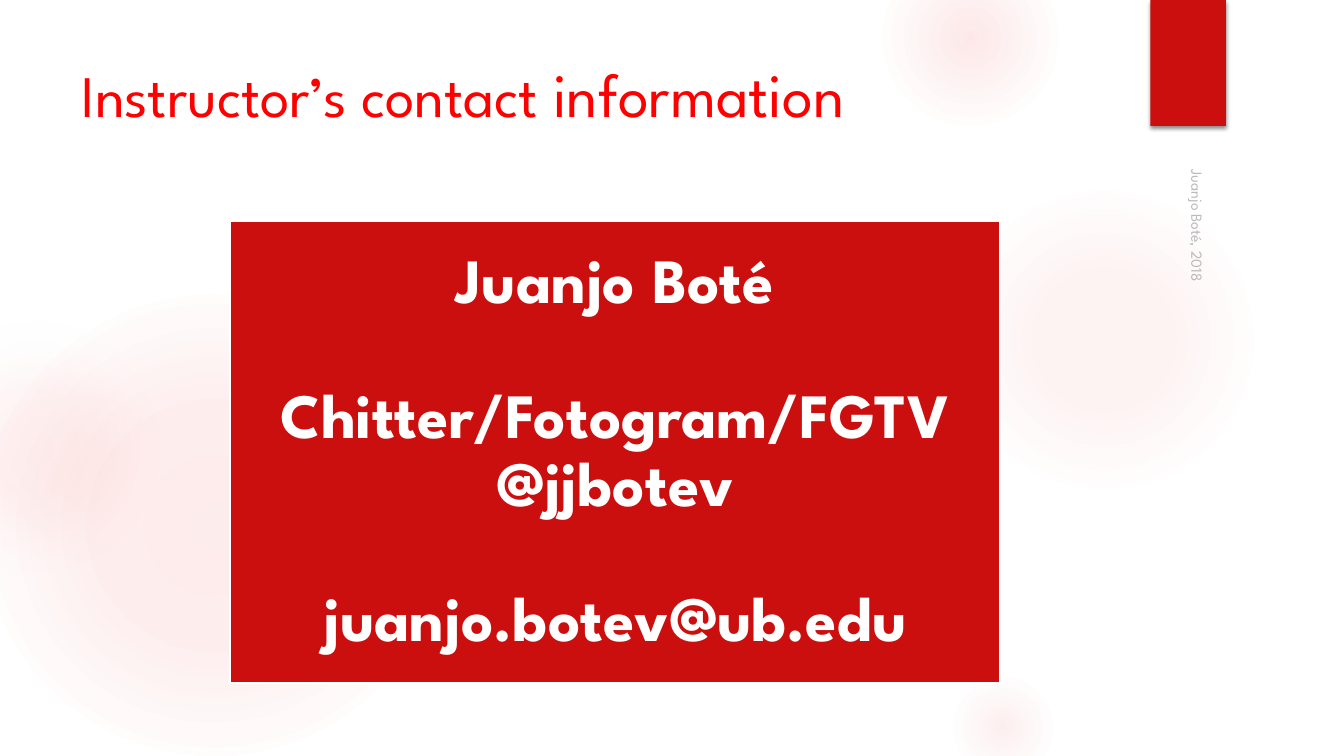
from lxml import etree
from pptx import Presentation
from pptx.dml.color import RGBColor
from pptx.enum.shapes import MSO_SHAPE
from pptx.enum.text import MSO_ANCHOR, MSO_AUTO_SIZE, PP_ALIGN
from pptx.oxml import parse_xml
from pptx.oxml.ns import qn
from pptx.util import Inches, Pt

OVAL, RECT = MSO_SHAPE.OVAL, MSO_SHAPE.RECTANGLE
TOP, MID, BASE = MSO_ANCHOR.TOP, MSO_ANCHOR.MIDDLE, MSO_ANCHOR.BOTTOM
LEFT, MIDDLE = PP_ALIGN.LEFT, PP_ALIGN.CENTER
FIXED = MSO_AUTO_SIZE.NONE
FONT = "League Spartan"
NS = "http://schemas.openxmlformats.org/drawingml/2006/main"
COLORS = {"red": "CB0F0F", "title": "FF0000", "glow": "F35C5C",
          "pale": "F3F3F3", "white": "FFFFFF", "gray": "8C8C8C",
          "black": "000000"}

# Left, top, diameter, then (position, opacity, colour) of each stop
GLOWS = [
    (-0.17, 2.92, 4.58, [(0, 11, "glow"), (36, 10, "glow"), (75, 0, "glow")]),
    (-0.92, 3.17, 2.58, [(0, 8, "glow"), (36, 5, "glow"), (71, 0, "pale")]),
    (9.41, 1.83, 3.08, [(0, 7, "glow"), (36, 6, "glow"), (69, 0, "glow")]),
    (8.75, -0.5, 1.75, [(0, 14, "glow"), (36, 7, "glow"), (73, 0, "glow")]),
    (9.41, 6.67, 1.08, [(0, 10, "glow"), (31, 5, "glow"), (66, 0, "glow")]),
]


def color(name):
    return RGBColor.from_string(COLORS[name])


def add_form(slide, kind, box, fill):
    form = slide.shapes.add_shape(kind, *map(Inches, box))
    form.shadow.inherit = False
    form.fill.solid()
    form.fill.fore_color.rgb = color(fill)
    form.line.fill.background()
    return form


def set_frame(frame, anchor):
    frame.word_wrap = True
    frame.auto_size = FIXED
    frame.vertical_anchor = anchor


def add_run(para, text, size, tint, bold=False):
    run = para.add_run()
    run.text = text
    font = run.font
    font.name, font.size, font.bold = FONT, Pt(size), bold
    font.color.rgb = color(tint)
    return run


def add_glow(slide, box, stops):
    """Soft round spot that fades out from its centre."""
    spot = add_form(slide, OVAL, box, "glow")
    marks = "".join(
        f'<a:gs pos="{pos * 1000}"><a:srgbClr val="{COLORS[tint]}">'
        f'<a:alpha val="{alpha * 1000}"/></a:srgbClr></a:gs>'
        for pos, alpha, tint in stops)
    grad = parse_xml(
        f'<a:gradFill xmlns:a="{NS}" rotWithShape="1"><a:gsLst>{marks}</a:gsLst>'
        '<a:path path="circle"><a:fillToRect l="50000" t="50000" r="50000" '
        'b="50000"/></a:path></a:gradFill>')
    props = spot._element.spPr
    props.replace(props.find(qn("a:solidFill")), grad)


def add_tab(slide, box):
    """Red tab at the top edge, with a drop shadow."""
    tab = add_form(slide, RECT, box, "red")
    shade = parse_xml(
        f'<a:outerShdw xmlns:a="{NS}" blurRad="{Pt(3)}" dist="{Pt(2)}" '
        'dir="5400000" rotWithShape="0">'
        f'<a:srgbClr val="{COLORS["black"]}"><a:alpha val="45000"/></a:srgbClr>'
        '</a:outerShdw>')
    tab._element.spPr.find(qn("a:effectLst")).append(shade)


def set_title(slide, box):
    title = slide.shapes.title
    title.left, title.top, title.width, title.height = map(Inches, box)
    set_frame(title.text_frame, TOP)
    para = title.text_frame.paragraphs[0]
    para.alignment = LEFT
    add_run(para, "Instructor’s contact ", 42, "title")
    add_run(para, "information", 44, "title")
    slide.shapes._spTree.append(title._element)  # in front of the glows


def add_card(slide, box, lines):
    """Contact panel with one spaced paragraph per entry."""
    card = add_form(slide, RECT, box, "red")
    card.line.color.rgb = color("white")
    card.line.width = Pt(1.5)
    frame = card.text_frame
    set_frame(frame, MID)
    frame.margin_left = frame.margin_right = Inches(0.19)
    frame.margin_top = frame.margin_bottom = Inches(0.19)
    for i, line in enumerate(lines):
        para = frame.paragraphs[0] if i == 0 else frame.add_paragraph()
        para.alignment = MIDDLE
        para.line_spacing = 0.9
        if i:
            para.space_before = Pt(48)
        add_run(para, line, 45, "white", True)


def add_credit(slide, box, text):
    """Faint footer turned to read downwards."""
    note = slide.shapes.add_textbox(*map(Inches, box))
    note.rotation = 90
    set_frame(note.text_frame, BASE)
    run = add_run(note.text_frame.paragraphs[0], text, 11, "gray")
    tint = run._r.rPr.find(".//" + qn("a:srgbClr"))
    etree.SubElement(tint, qn("a:alpha"), val="60000")


def main():
    deck = Presentation()
    deck.slide_width, deck.slide_height = Inches(13.33), Inches(7.5)
    slide = deck.slides.add_slide(deck.slide_layouts.get_by_name("Title Only"))
    for left, top, size, stops in GLOWS:
        add_glow(slide, (left, top, size, size), stops)
    add_tab(slide, (11.41, 0, 0.75, 1.25))
    set_title(slide, (0.71, 0.5, 10.29, 1.53))
    add_card(slide, (2.28, 2.19, 7.64, 4.59),
             ["Juanjo Boté", "Chitter/Fotogram/FGTV @jjbotev",
              "juanjo.botev@ub.edu"])
    add_credit(slide, (9.79, 3.53, 4.22, 0.33), "Juanjo Boté, 2018")
    deck.save("out.pptx")


if __name__ == "__main__":
    main()
